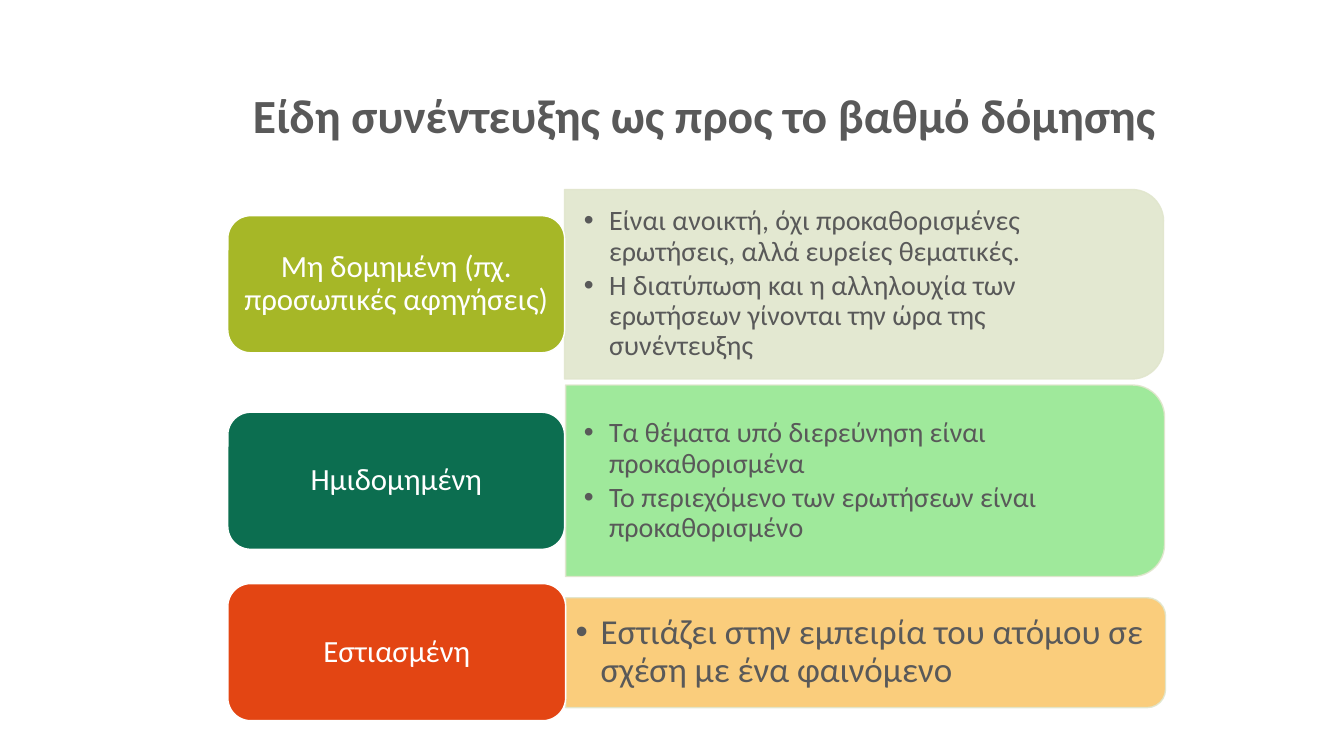
from dataclasses import dataclass

from lxml import etree
from pptx import Presentation
from pptx.dml.color import RGBColor
from pptx.enum.shapes import MSO_SHAPE
from pptx.enum.text import MSO_ANCHOR, PP_ALIGN
from pptx.oxml.ns import qn
from pptx.util import Emu, Pt

PANEL_SHAPE = MSO_SHAPE.ROUND_2_SAME_RECTANGLE
LABEL_SHAPE = MSO_SHAPE.ROUNDED_RECTANGLE
MIDDLE, BOTTOM = MSO_ANCHOR.MIDDLE, MSO_ANCHOR.BOTTOM
LEFT, CENTER = PP_ALIGN.LEFT, PP_ALIGN.CENTER

EMU_PER_PX = 9144
FONT_NAME = "Calibri"
TEXT_COLOR = "595959"
WHITE = "FFFFFF"
PANEL_LINE = "E1E6CD"
PANEL_OPACITY = 90
BULLET_INDENT = 25
LABEL_LEFT, LABEL_HEIGHT = 226, 136


@dataclass(frozen=True)
class Box:
    left: int
    top: int
    width: int
    height: int

    def turned(self) -> "Box":
        shift = (self.width - self.height) // 2
        return Box(self.left + shift, self.top - shift, self.height, self.width)


@dataclass(frozen=True)
class TextStyle:
    size: int
    color: str
    anchor: MSO_ANCHOR
    alignment: PP_ALIGN = LEFT
    margin_x: int = 10
    margin_y: int = 5
    bold: bool = False
    bulleted: bool = False


@dataclass(frozen=True)
class InterviewKind:
    label: str
    label_color: str
    label_top: int
    label_width: int
    panel: Box
    panel_color: str
    details: tuple[str, ...]
    details_box: Box
    details_style: TextStyle


TITLE_STYLE = TextStyle(34, TEXT_COLOR, BOTTOM, bold=True)
LABEL_STYLE = TextStyle(22, WHITE, MIDDLE, CENTER, margin_x=8)
DETAILS_STYLE = TextStyle(20, TEXT_COLOR, MIDDLE, margin_x=19, margin_y=9, bulleted=True)
LARGE_DETAILS_STYLE = TextStyle(25, TEXT_COLOR, MIDDLE, bulleted=True)

TITLE = "Είδη συνέντευξης ως προς το βαθμό δόμησης"
INTERVIEW_KINDS = (
    InterviewKind(
        "Μη δομημένη (πχ. προσωπικές αφηγήσεις)", "A6B727", 214, 334,
        Box(560, 188, 594, 188), "E1E6CD",
        ("Είναι ανοικτή, όχι προκαθορισμένες ερωτήσεις, αλλά ευρείες θεματικές.",
         "Η διατύπωση και η αλληλουχία των ερωτήσεων γίνονται την ώρα της συνέντευξης"),
        Box(560, 198, 585, 168), DETAILS_STYLE),
    InterviewKind(
        "Ημιδομημένη", "0C6E50", 409, 334,
        Box(561, 382, 594, 190), "95E791",
        ("Τα θέματα υπό διερεύνηση είναι προκαθορισμένα",
         "Το περιεχόμενο των ερωτήσεων είναι προκαθορισμένο"),
        Box(560, 392, 585, 171), DETAILS_STYLE),
    InterviewKind(
        "Εστιασμένη", "E34513", 579, 335,
        Box(561, 593, 595, 109), "FAC86E",
        ("Εστιάζει στην εμπειρία του ατόμου σε σχέση με ένα φαινόμενο",),
        Box(561, 598, 590, 98), LARGE_DETAILS_STYLE),
)


def px(length: int) -> Emu:
    return Emu(length * EMU_PER_PX)


def rgb(color: str) -> RGBColor:
    return RGBColor.from_string(color)


def place(box: Box) -> tuple[Emu, ...]:
    return px(box.left), px(box.top), px(box.width), px(box.height)


def set_attributes(target, values: dict) -> None:
    for name, value in values.items():
        setattr(target, name, value)


def add_bullet(paragraph) -> None:
    paragraph.level = 1
    properties = paragraph._p.get_or_add_pPr()
    properties.set("marL", str(px(BULLET_INDENT)))
    properties.set("indent", str(px(-BULLET_INDENT)))
    etree.SubElement(properties, qn("a:buFont")).set("typeface", "Arial")
    etree.SubElement(properties, qn("a:buChar")).set("char", "•")


def write_text(shape, texts: tuple[str, ...], style: TextStyle) -> None:
    frame = shape.text_frame
    set_attributes(frame, {
        "word_wrap": True,
        "vertical_anchor": style.anchor,
        "margin_left": px(style.margin_x),
        "margin_right": px(style.margin_x),
        "margin_top": px(style.margin_y),
        "margin_bottom": px(style.margin_y),
    })
    for index, text in enumerate(texts):
        paragraph = frame.add_paragraph() if index else frame.paragraphs[0]
        set_attributes(paragraph, {"alignment": style.alignment, "line_spacing": 0.9})
        if style.bulleted:
            paragraph.space_after = Pt(3)
            add_bullet(paragraph)
        run = paragraph.add_run()
        run.text = text
        set_attributes(run.font, {
            "name": FONT_NAME, "size": Pt(style.size), "bold": style.bold})
        run.font.color.rgb = rgb(style.color)


def add_text(slide, box: Box, texts: tuple[str, ...], style: TextStyle) -> None:
    write_text(slide.shapes.add_textbox(*place(box)), texts, style)


def add_filled_shape(slide, kind: MSO_SHAPE, box: Box, fill: str, line: str):
    shape = slide.shapes.add_shape(kind, *place(box))
    shape.shadow.inherit = False
    shape.fill.solid()
    shape.fill.fore_color.rgb = rgb(fill)
    shape.line.color.rgb = rgb(line)
    shape.line.width = Pt(1)
    return shape


def add_panel(slide, box: Box, color: str) -> None:
    panel = add_filled_shape(slide, PANEL_SHAPE, box.turned(), color, PANEL_LINE)
    panel.rotation = 90
    for color_element in panel._element.spPr.iter(qn("a:srgbClr")):
        alpha = etree.SubElement(color_element, qn("a:alpha"))
        alpha.set("val", str(PANEL_OPACITY * 1000))


def add_interview_kind(slide, kind: InterviewKind) -> None:
    add_panel(slide, kind.panel, kind.panel_color)
    add_text(slide, kind.details_box, kind.details, kind.details_style)
    label_box = Box(LABEL_LEFT, kind.label_top, kind.label_width, LABEL_HEIGHT)
    label = add_filled_shape(slide, LABEL_SHAPE, label_box, kind.label_color, WHITE)
    write_text(label, (kind.label,), LABEL_STYLE)


def main() -> None:
    presentation = Presentation()
    set_attributes(presentation, {"slide_width": px(1333), "slide_height": px(750)})
    slide = presentation.slides.add_slide(presentation.slide_layouts[6])
    add_text(slide, Box(241, 19, 1025, 129), (TITLE,), TITLE_STYLE)
    for kind in INTERVIEW_KINDS:
        add_interview_kind(slide, kind)
    presentation.save("out.pptx")


if __name__ == "__main__":
    main()
